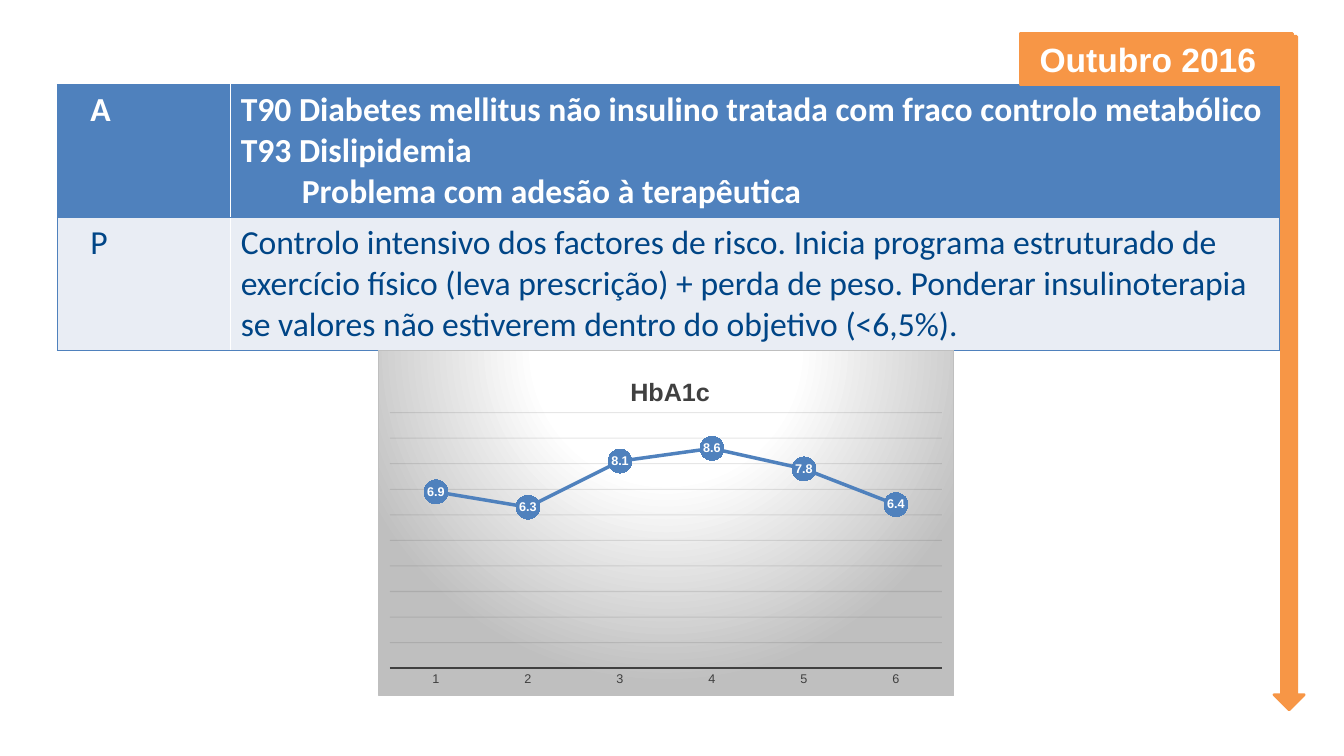
"""Build the October 2016 assessment and plan slide with its HbA1c chart."""
import pptx
import pptx.chart.data
import pptx.dml.color
import pptx.enum.chart
import pptx.enum.shapes
import pptx.enum.text
import pptx.oxml
import pptx.oxml.ns
import pptx.util

Pt = pptx.util.Pt
RGB = pptx.dml.color.RGBColor
qn = pptx.oxml.ns.qn
NS = pptx.oxml.ns.nsdecls("a", "c")

BLUE = RGB(0x4F, 0x81, 0xBD)
PALE = RGB(0xE9, 0xED, 0xF4)
NAVY = RGB(0x00, 0x45, 0x86)
ORANGE = RGB(0xF7, 0x96, 0x46)
WHITE = RGB(0xFF, 0xFF, 0xFF)
GREY = RGB(0x40, 0x40, 0x40)
SILVER = RGB(0xBF, 0xBF, 0xBF)
INK = RGB(0x0D, 0x0D, 0x0D)

DATE = "Outubro 2016"
ROWS = [
    ("A", ["T90 Diabetes mellitus não insulino tratada com fraco controlo metabólico",
           "T93 Dislipidemia",
           "Problema com adesão à terapêutica"]),
    ("P", ["Controlo intensivo dos factores de risco. Inicia programa estruturado de "
           "exercício físico (leva prescrição) + perda de peso. Ponderar insulinoterapia "
           "se valores não estiverem dentro do objetivo (<6,5%)."]),
]
ROW_STYLES = [(BLUE, WHITE, True), (PALE, NAVY, False)]
INDENTS = {"Problema com adesão à terapêutica": 43.6}
HBA1C = [6.9, 6.3, 8.1, 8.6, 7.8, 6.4]

TABLE_LEFT, TABLE_TOP, ROW_H = 41, 60.5, 95
COL_W = [123.8, 749.5]
CELL_INSETS = [23.6, 7.2]


def write(tf, lines, size=24, font="Calibri", color=WHITE, bold=False):
    """Fill a text frame with one formatted paragraph per line."""
    for i, line in enumerate(lines):
        p = tf.add_paragraph() if i else tf.paragraphs[0]
        r = p.add_run()
        r.text = line
        r.font.size, r.font.name, r.font.bold = Pt(size), font, bold
        r.font.color.rgb = color
        if line in INDENTS:
            p._p.get_or_add_pPr().set("marL", str(Pt(INDENTS[line])))


def set_font(font, size, color, bold=False):
    """Format chart text."""
    font.size, font.name, font.bold = Pt(size), "Arial", bold
    font.color.rgb = color


def set_line(line, color, width):
    """Give a line its colour and width."""
    line.color.rgb = color
    line.width = Pt(width)


def add_table(s):
    """Add the assessment and plan table."""
    frame = s.shapes.add_table(len(ROWS), 2, Pt(TABLE_LEFT), Pt(TABLE_TOP),
                               Pt(sum(COL_W)), Pt(ROW_H * len(ROWS)))
    table = frame.table
    for col, width in zip(table.columns, COL_W):
        col.width = Pt(width)
    for i, (label, lines) in enumerate(ROWS):
        table.rows[i].height = Pt(ROW_H)
        fill, color, bold = ROW_STYLES[i]
        for j, content in enumerate([[label], lines]):
            cell = table.cell(i, j)
            cell.margin_left = Pt(CELL_INSETS[j])
            for side in (["L", "T", "B"], ["R", "T", "B"])[j]:
                cell._tc.get_or_add_tcPr().append(pptx.oxml.parse_xml(
                    f'<a:ln{side} {NS} w="{Pt(1)}"><a:solidFill>'
                    f'<a:srgbClr val="{BLUE}"/></a:solidFill></a:ln{side}>'))
            cell.fill.solid()
            cell.fill.fore_color.rgb = fill
            write(cell.text_frame, content, color=color, bold=bold)


def add_orange(s, preset, left, top, width, height):
    """Add an orange shape and return it."""
    sp = s.shapes.add_shape(preset, Pt(left), Pt(top), Pt(width), Pt(height))
    sp.shadow.inherit = False
    sp.fill.solid()
    sp.fill.fore_color.rgb = ORANGE
    set_line(sp.line, ORANGE, 2)
    return sp


def layout_xml(x, y, extra=""):
    """Return a manual chart layout element."""
    return pptx.oxml.parse_xml(
        f'<c:layout {NS}><c:manualLayout>{"<c:layoutTarget val=%sinner%s/>" % (chr(34), chr(34)) if extra else ""}'
        f'<c:xMode val="edge"/><c:yMode val="edge"/><c:x val="{x}"/><c:y val="{y}"/>'
        f'{extra}</c:manualLayout></c:layout>')


def replace_layout(parent, layout, index):
    """Swap the layout element of a chart part."""
    for old in parent.findall(qn("c:layout")):
        parent.remove(old)
    parent.insert(index, layout)


def add_chart(s):
    """Add the HbA1c line chart."""
    data = pptx.chart.data.CategoryChartData()
    data.categories = [str(n + 1) for n in range(len(HBA1C))]
    data.add_series("Series 1", HBA1C)
    enum = pptx.enum.chart
    chart = s.shapes.add_chart(enum.XL_CHART_TYPE.LINE_MARKERS, Pt(270), Pt(250),
                               Pt(411.5), Pt(247.5), data).chart
    set_font(chart.font, 10, RGB(0, 0, 0))
    chart.has_legend = False
    chart.has_title = True
    write(chart.chart_title.text_frame, ["HbA1c"], size=18, font="Arial", color=GREY, bold=True)
    chart.chart_title.include_in_layout = False
    replace_layout(chart.chart_title._element, layout_xml(0.43, 0.06), 1)
    replace_layout(chart._chartSpace.chart.plotArea,
                   layout_xml(0.02, 0.18, '<c:w val="0.96"/><c:h val="0.74"/>'), 0)

    axis = chart.category_axis
    axis.major_tick_mark = enum.XL_TICK_MARK.NONE
    set_font(axis.tick_labels.font, 9, GREY)
    set_line(axis.format.line, GREY, 1.5)
    values = chart.value_axis
    values.minimum_scale, values.maximum_scale, values.major_unit = 0, 10, 1
    values.visible = False
    grid = values.major_gridlines.format.line
    set_line(grid, INK, 0.75)
    color = values._element.find(".//" + qn("a:srgbClr"))
    color.append(pptx.oxml.parse_xml(f'<a:alpha {NS} val="10000"/>'))

    plot = chart.plots[0]
    plot.vary_by_categories = False
    series = plot.series[0]
    series.smooth = False
    set_line(series.format.line, BLUE, 2.5)
    marker = series.marker
    marker.style, marker.size = enum.XL_MARKER_STYLE.CIRCLE, 17
    marker.format.fill.solid()
    marker.format.fill.fore_color.rgb = BLUE
    marker.format.line.fill.background()
    labels = series.data_labels
    labels.show_value = True
    labels.position = enum.XL_LABEL_POSITION.CENTER
    set_font(labels.font, 9, WHITE, True)

    stops = "".join(f'<a:gs pos="{pos}000"><a:srgbClr val="{c}"/></a:gs>'
                    for pos, c in [(0, WHITE), (39, WHITE), (100, SILVER)])
    chart._chartSpace.chart.addnext(pptx.oxml.parse_xml(
        f'<c:spPr {NS}><a:gradFill><a:gsLst>{stops}</a:gsLst><a:path path="circle">'
        '<a:fillToRect l="50000" t="-80000" r="50000" b="180000"/></a:path></a:gradFill>'
        f'<a:ln w="{Pt(0.75)}"><a:solidFill><a:srgbClr val="{SILVER}"/></a:solidFill></a:ln></c:spPr>'))


def main():
    """Build and save the slide."""
    prs = pptx.Presentation()
    prs.slide_width, prs.slide_height = Pt(960), Pt(540)
    s = prs.slides.add_slide(prs.slide_layouts[6])
    add_table(s)
    preset = pptx.enum.shapes.MSO_SHAPE
    tf = add_orange(s, preset.RECTANGLE, 728.6, 23.8, 194.4, 36.7).text_frame
    tf.margin_left = Pt(14)
    tf.vertical_anchor = pptx.enum.text.MSO_ANCHOR.MIDDLE
    tf.paragraphs[0].alignment = pptx.enum.text.PP_ALIGN.LEFT
    write(tf, [DATE], font="Arial", bold=True)
    add_orange(s, preset.DOWN_ARROW, 910, 26, 21.6, 481)
    add_chart(s)
    prs.save("out.pptx")


if __name__ == "__main__":
    main()
